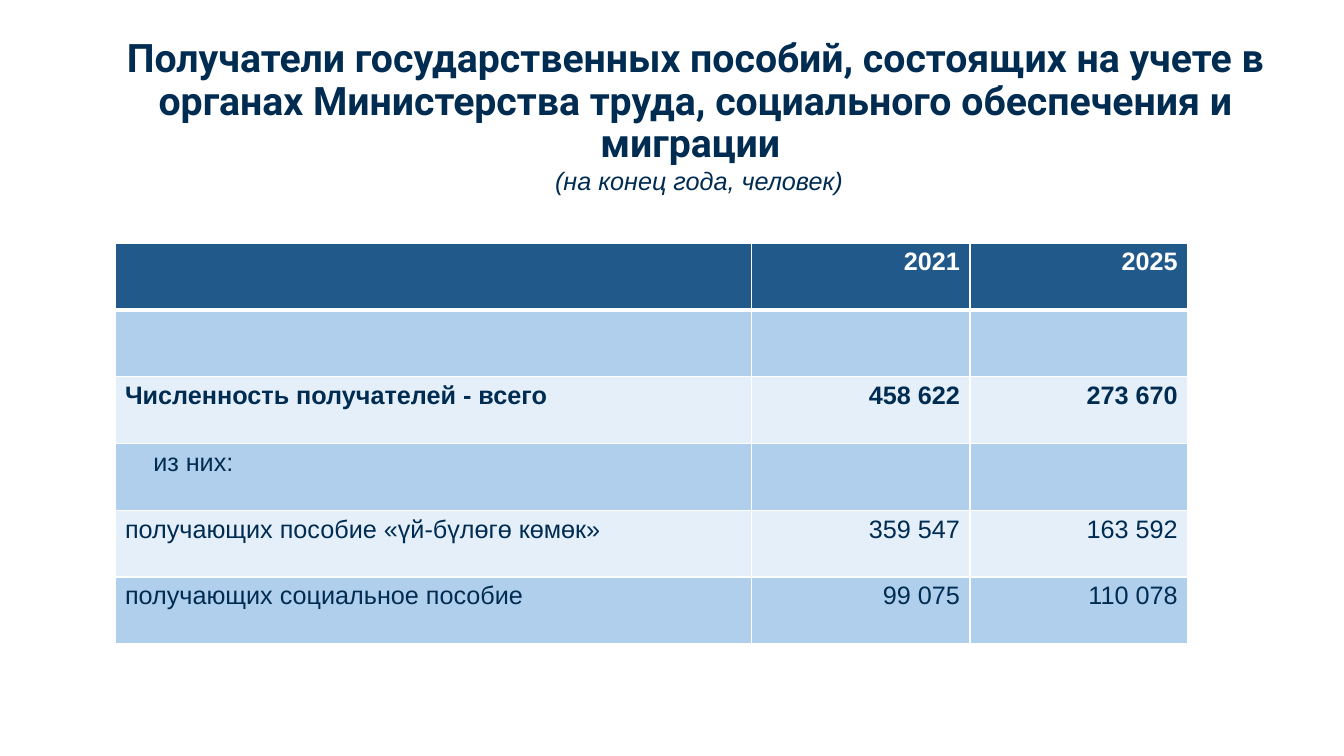
from copy import deepcopy
from dataclasses import dataclass

from lxml import etree
from pptx import Presentation
from pptx import util as u
from pptx.dml import color
from pptx.enum import text
from pptx.oxml import ns


@dataclass(frozen=True)
class Theme:
    """Colours, fonts and type sizes of the slide."""
    ink: str = "002C52"
    white: str = "FFFFFF"
    header: str = "21598B"
    bands: tuple = ("AFCFEC", "E4EFF9")
    heading_font: str = "Roboto"
    body_font: str = "Arial"
    heading_size: int = 28
    spacer_size: int = 20
    body_size: int = 18


THEME = Theme()
HEADING = ("Получатели государственных пособий, состоящих на учете в органах "
           "Министерства труда, социального обеспечения и миграции ")
SUBHEADING = "(на конец года, человек)"
ROWS = [
    ("", "2021", "2025"),
    ("", "", ""),
    ("Численность получателей - всего", "458 622", "273 670"),
    ("из них:", "", ""),
    ("получающих пособие «үй-бүлөгө көмөк»", "359 547", "163 592"),
    ("получающих социальное пособие", "99 075", "110 078"),
]
BOLD_ROWS = (0, 2)
INDENTED_ROW = 3
COLUMN_WIDTHS = (6.31, 2.17, 2.16)


def apply(target, values):
    """Set each attribute of the target from a dict."""
    for name, value in values.items():
        setattr(target, name, value)


def add_span(para, words, ink=THEME.ink, font=THEME.body_font,
             size=THEME.body_size, bold=False, italic=False):
    """Add a formatted run to a paragraph."""
    span = para.add_run()
    span.text = words
    apply(span.font, {"name": font, "size": u.Pt(size), "bold": bold, "italic": italic})
    span.font.color.rgb = color.RGBColor.from_string(ink)
    return span


def add_border(cell, side, width):
    """Draw a white border on one side of a cell."""
    properties = cell._tc.get_or_add_tcPr()
    line = etree.SubElement(properties, ns.qn(f"a:ln{side}"), w=str(u.Pt(width)))
    fill = etree.SubElement(line, ns.qn("a:solidFill"))
    etree.SubElement(fill, ns.qn("a:srgbClr"), val=THEME.white)


def build_title(page, left, top, width, height):
    """Place the heading and its unit note in the title placeholder."""
    title = page.shapes.title
    apply(title, {"left": u.Inches(left), "top": u.Inches(top),
                  "width": u.Inches(width), "height": u.Inches(height)})
    apply(title.text_frame, {"word_wrap": True, "auto_size": text.MSO_AUTO_SIZE.NONE,
                             "vertical_anchor": text.MSO_ANCHOR.MIDDLE})
    para = title.text_frame.paragraphs[0]
    apply(para, {"alignment": text.PP_ALIGN.CENTER, "line_spacing": 0.9})
    heading = add_span(para, HEADING, font=THEME.heading_font,
                       size=THEME.heading_size, bold=True)
    para.add_line_break()
    para._p[-1].append(deepcopy(heading._r.rPr))
    add_span(para, " ", size=THEME.spacer_size, bold=True)
    add_span(para, SUBHEADING, italic=True)


def build_table(page, left, top, width, height):
    """Place the table of benefit recipients."""
    frame = page.shapes.add_table(len(ROWS), len(COLUMN_WIDTHS), u.Inches(left),
                                  u.Inches(top), u.Inches(width), u.Inches(height))
    table = frame.table
    for column, column_width in zip(table.columns, COLUMN_WIDTHS):
        column.width = u.Inches(column_width)
    for row_index, row in enumerate(ROWS):
        is_header = row_index == 0
        widths = {"L": 1, "R": 1, "T": 3 if row_index == 1 else 1, "B": 3 if is_header else 1}
        background = THEME.header if is_header else THEME.bands[(row_index - 1) % 2]
        for column_index, words in enumerate(row):
            cell = table.cell(row_index, column_index)
            for side, border_width in widths.items():
                add_border(cell, side, border_width)
            cell.fill.solid()
            cell.fill.fore_color.rgb = color.RGBColor.from_string(background)
            para = cell.text_frame.paragraphs[0]
            if column_index:
                para.alignment = text.PP_ALIGN.RIGHT
            elif row_index == INDENTED_ROW:
                cell.margin_left = u.Inches(0.38)
            if words:
                add_span(para, words, ink=THEME.white if is_header else THEME.ink,
                         bold=row_index in BOLD_ROWS)


def main():
    """Build the slide and save the deck."""
    deck = Presentation()
    apply(deck, {"slide_width": u.Inches(13.33), "slide_height": u.Inches(7.5)})
    page = deck.slides.add_slide(deck.slide_layouts[5])
    build_title(page, 1.14, 0.38, 11.51, 1.57)
    build_table(page, 1.14, 2.41, sum(COLUMN_WIDTHS), 3.98)
    deck.save("out.pptx")


if __name__ == "__main__":
    main()
